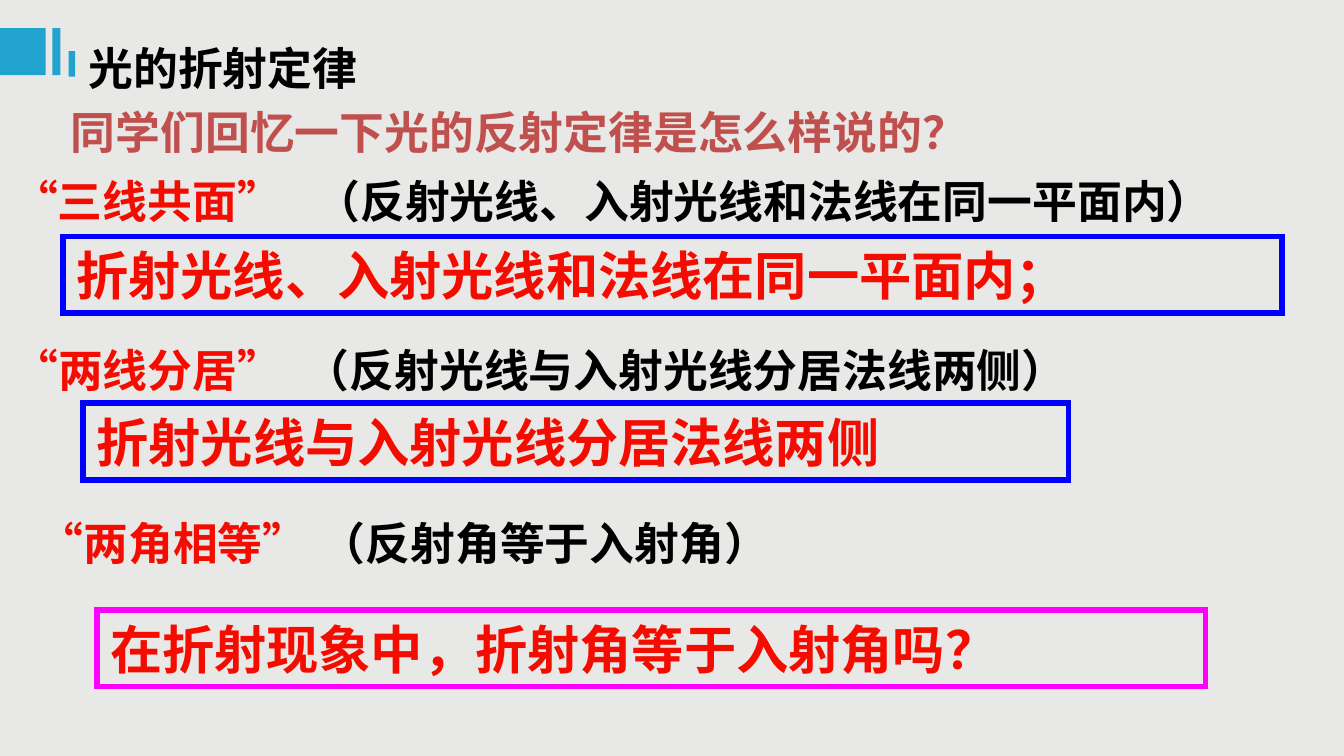
from dataclasses import dataclass

from lxml.etree import SubElement
from pptx import Presentation
from pptx.dml.color import RGBColor as RGB
from pptx.enum.shapes import MSO_SHAPE as SHAPE
from pptx.enum.text import MSO_ANCHOR as ANCHOR, PP_ALIGN as ALIGN
from pptx.oxml.ns import qn
from pptx.util import Inches, Pt


@dataclass(frozen=True)
class Theme:
    """Colours, fonts and sizes of the slide."""
    paper: RGB = RGB.from_string("E8E8E6")
    accent: RGB = RGB.from_string("21A3D0")
    ink: RGB = RGB.from_string("000000")
    question: RGB = RGB.from_string("C0504D")
    red: RGB = RGB.from_string("F40C01")
    blue: RGB = RGB.from_string("0000FF")
    magenta: RGB = RGB.from_string("FF00FF")
    latin: str = "Calibri"
    cjk: str = "Noto Sans CJK SC"
    body: int = 24
    law: int = 28
    border: int = 3
    text_h: float = 0.5
    frame_h: float = 0.57


T = Theme()


def write(sp, text, size, color, font=T.latin):
    """Put one bold line of text into a shape."""
    tf = sp.text_frame
    tf.word_wrap = True
    tf.vertical_anchor = ANCHOR.MIDDLE
    tf.margin_top = tf.margin_bottom = 0
    p = tf.paragraphs[0]
    p.alignment = ALIGN.LEFT
    r = p.add_run()
    r.text = text
    r.font.size = Pt(size)
    r.font.bold = True
    r.font.color.rgb = color
    r.font.name = font
    SubElement(r.font._element, qn("a:ea"), typeface=T.cjk)


def add_text(s, x, y, w, text, color, font=T.latin):
    """Add a line of body text."""
    sp = s.shapes.add_textbox(Inches(x), Inches(y), Inches(w), Inches(T.text_h))
    write(sp, text, T.body, color, font)


def add_rect(s, x, y, w, h):
    """Add a rectangle without a shadow."""
    sp = s.shapes.add_shape(SHAPE.RECTANGLE, Inches(x), Inches(y), Inches(w), Inches(h))
    sp.shadow.inherit = False
    return sp


def add_frame(s, x, y, w, text, border):
    """Add a statement with a sharp-cornered outline."""
    sp = add_rect(s, x, y, w, T.frame_h)
    sp.fill.background()
    sp.line.color.rgb = border
    sp.line.width = Pt(T.border)
    SubElement(sp.line._get_or_add_ln(), qn("a:miter"), lim="800000")
    write(sp, text, T.law, T.red)


def add_header(s, x, y, w, title):
    """Add the three accent bars and the title beside them."""
    for dx, dy, bar_w, bar_h in ((0, 0, 0.34, 0.35), (0.39, 0, 0.06, 0.35), (0.51, 0.17, 0.05, 0.19)):
        bar = add_rect(s, x + dx, y + dy, bar_w, bar_h)
        bar.fill.solid()
        bar.fill.fore_color.rgb = T.accent
        bar.line.fill.background()
    add_text(s, x + 0.56, y + 0.04, w - 0.56, title, T.ink, T.cjk)


def add_rule(s, x, y, label, label_w, detail, detail_dx, detail_w):
    """Add a quoted rule name with its explanation to the right."""
    add_text(s, x, y, label_w, label, T.red)
    add_text(s, x + detail_dx, y, detail_w, detail, T.ink)


def main():
    """Build and save the slide."""
    prs = Presentation()
    prs.slide_width = Inches(10)
    prs.slide_height = prs.slide_width * 9 // 16
    s = prs.slides.add_slide(prs.slide_layouts[6])
    s.background.fill.solid()
    s.background.fill.fore_color.rgb = T.paper

    add_header(s, 0, 0.21, 6.34, "光的折射定律")
    add_text(s, 0.43, 0.73, 8.83, "同学们回忆一下光的反射定律是怎么样说的？", T.question)
    add_rule(s, 0, 1.24, "“三线共面”", 2.4, "（反射光线、入射光线和法线在同一平面内）", 2.25, 7.67)
    add_frame(s, 0.47, 1.76, 9.07, "折射光线、入射光线和法线在同一平面内；", T.blue)
    add_rule(s, 0, 2.5, "“两线分居”", 2.25, "（反射光线与入射光线分居法线两侧）", 2.17, 6.75)
    add_frame(s, 0.62, 3, 7.33, "折射光线与入射光线分居法线两侧", T.blue)
    add_rule(s, 0.19, 3.79, "“两角相等”", 2.4, "（反射角等于入射角）", 2.1, 6.04)
    add_frame(s, 0.72, 4.54, 8.25, "在折射现象中，折射角等于入射角吗？", T.magenta)

    prs.save("out.pptx")


if __name__ == "__main__":
    main()
